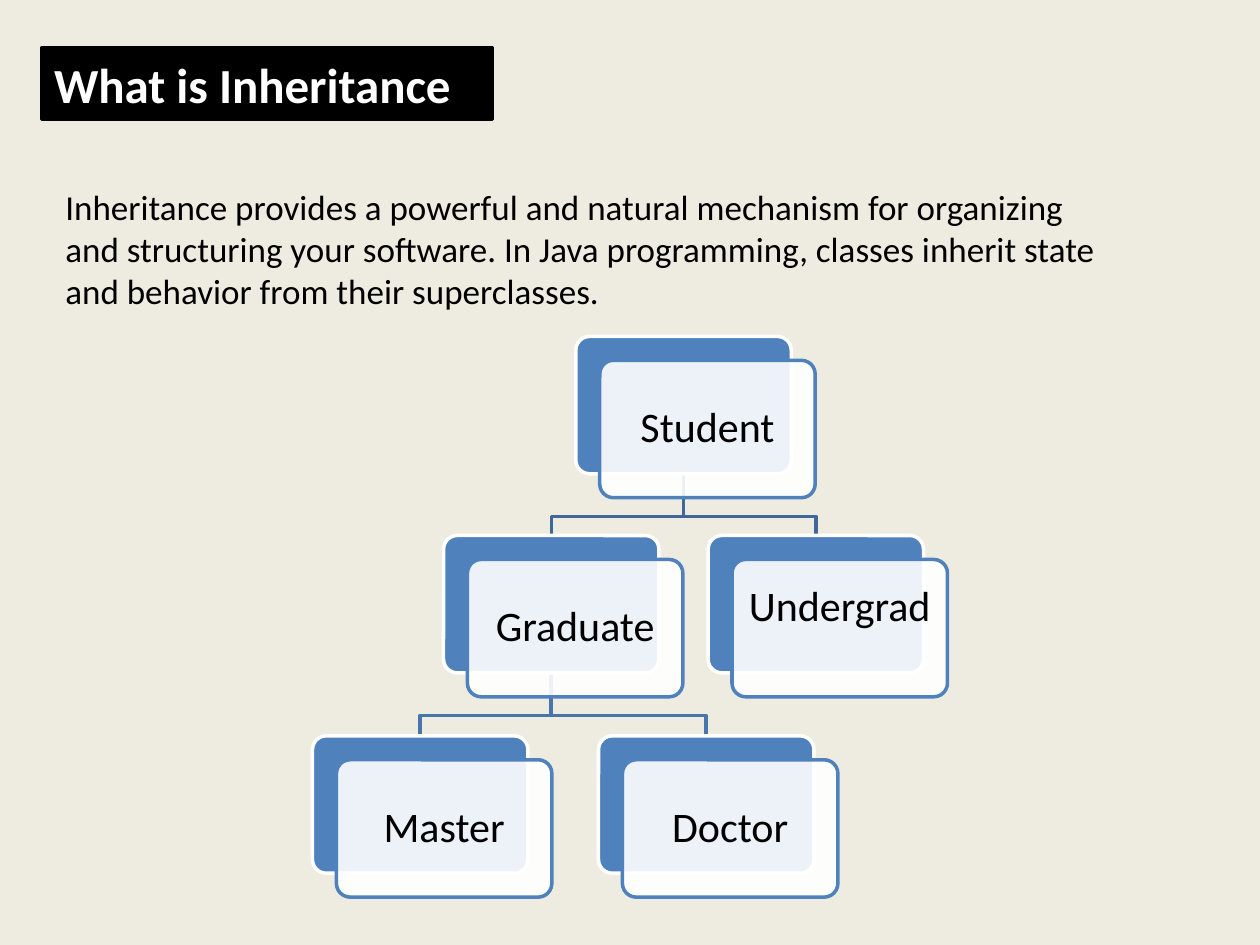
import pptx
import pptx.util
import pptx.dml.color
import pptx.enum.shapes
import pptx.enum.text
import pptx.oxml.ns
import lxml.etree

Inches = pptx.util.Inches
Pt = pptx.util.Pt
RGBColor = pptx.dml.color.RGBColor
ALIGN = pptx.enum.text.PP_ALIGN
ANCHOR = pptx.enum.text.MSO_ANCHOR

BACKGROUND = RGBColor(0xEE, 0xEC, 0xE1)
BLACK = RGBColor(0, 0, 0)
WHITE = RGBColor(0xFF, 0xFF, 0xFF)
BLUE = RGBColor(0x4F, 0x81, 0xBD)
UPPER_LINE = RGBColor(0x3F, 0x67, 0x97)
LOWER_LINE = RGBColor(0x48, 0x75, 0xAC)

CARD_WIDTH, CARD_HEIGHT = 1.71, 1.09
CARD_SHIFT = 0.19
LABEL_MARGIN = 0.03
BEND = 0.34


def write_text(shape, text, size, color, align, bold=False):
    frame = shape.text_frame
    frame.word_wrap = True
    frame.text = text
    para = frame.paragraphs[0]
    para.alignment = align
    font = para.runs[0].font
    font.name, font.size, font.bold = "Calibri", Pt(size), bold
    font.color.rgb = color
    return para


def add_card(left, top, fill, line):
    card = slide.shapes.add_shape(
        pptx.enum.shapes.MSO_SHAPE.ROUNDED_RECTANGLE,
        Inches(left), Inches(top), Inches(CARD_WIDTH), Inches(CARD_HEIGHT))
    card.adjustments[0] = 0.1
    card.shadow.inherit = False
    card.fill.solid()
    card.fill.fore_color.rgb = fill
    card.line.color.rgb = line
    card.line.width = Pt(2)
    return card


deck = pptx.Presentation()
deck.slide_width, deck.slide_height = Inches(10), Inches(7.5)
slide = deck.slides.add_slide(deck.slide_layouts[5])
slide.background.fill.solid()
slide.background.fill.fore_color.rgb = BACKGROUND

title = slide.shapes.title
title.left, title.top = Inches(0.33), Inches(0.38)
title.width, title.height = Inches(3.58), Inches(0.57)
title.fill.solid()
title.fill.fore_color.rgb = BLACK
title.line.color.rgb = BLACK
title.line.width = Pt(2)
title.text_frame.vertical_anchor = ANCHOR.TOP
title.text_frame.auto_size = pptx.enum.text.MSO_AUTO_SIZE.NONE
write_text(title, "What is Inheritance", 28, WHITE, ALIGN.LEFT, True)

body = slide.shapes.add_textbox(Inches(0.42), Inches(1.42), Inches(8.42), Inches(1.11))
write_text(
    body,
    "Inheritance provides a powerful and natural mechanism for organizing and "
    "structuring your software. In Java programming, classes inherit state and "
    "behavior from their superclasses.",
    20, BLACK, ALIGN.LEFT)

classes = {
    "Student": (4.57, 2.67),
    "Graduate": (3.52, 4.25),
    "Master": (2.48, 5.84),
    "Doctor": (4.75, 5.84),
    "Undergrad": (5.62, 4.25),
}
links = [
    ("Student", "Undergrad", UPPER_LINE),
    ("Graduate", "Doctor", LOWER_LINE),
    ("Graduate", "Master", LOWER_LINE),
    ("Student", "Graduate", UPPER_LINE),
]

for parent, child, color in links:
    start_x = classes[parent][0] + CARD_WIDTH / 2
    start_y = classes[parent][1] + CARD_HEIGHT
    end_x = classes[child][0] + CARD_WIDTH / 2
    end_y = classes[child][1]
    builder = slide.shapes.build_freeform(Inches(start_x), Inches(start_y))
    corners = [(start_x, start_y + BEND), (end_x, start_y + BEND), (end_x, end_y)]
    builder.add_line_segments([(Inches(x), Inches(y)) for x, y in corners], close=False)
    branch = builder.convert_to_shape()
    branch.shadow.inherit = False
    branch.fill.background()
    branch.line.color.rgb = color
    branch.line.width = Pt(2)

for name, (left, top) in classes.items():
    add_card(left, top, BLUE, WHITE)
    front_left, front_top = left + CARD_SHIFT, top + CARD_SHIFT
    front = add_card(front_left, front_top, WHITE, BLUE)
    fill_color = front.fill._xPr.find(".//" + pptx.oxml.ns.qn("a:srgbClr"))
    lxml.etree.SubElement(fill_color, pptx.oxml.ns.qn("a:alpha"), val="90000")

    label = slide.shapes.add_textbox(
        Inches(front_left + LABEL_MARGIN), Inches(front_top + LABEL_MARGIN),
        Inches(CARD_WIDTH - 2 * LABEL_MARGIN), Inches(CARD_HEIGHT - 2 * LABEL_MARGIN))
    para = write_text(label, name, 24, BLACK, ALIGN.CENTER)
    para.line_spacing = 0.9
    frame = label.text_frame
    frame.vertical_anchor = ANCHOR.MIDDLE
    frame.margin_left = frame.margin_right = Inches(0.08)
    frame.margin_top = Inches(0.1)
    frame.margin_bottom = Inches(0.42 if name == "Undergrad" else 0.1)

deck.save("out.pptx")
